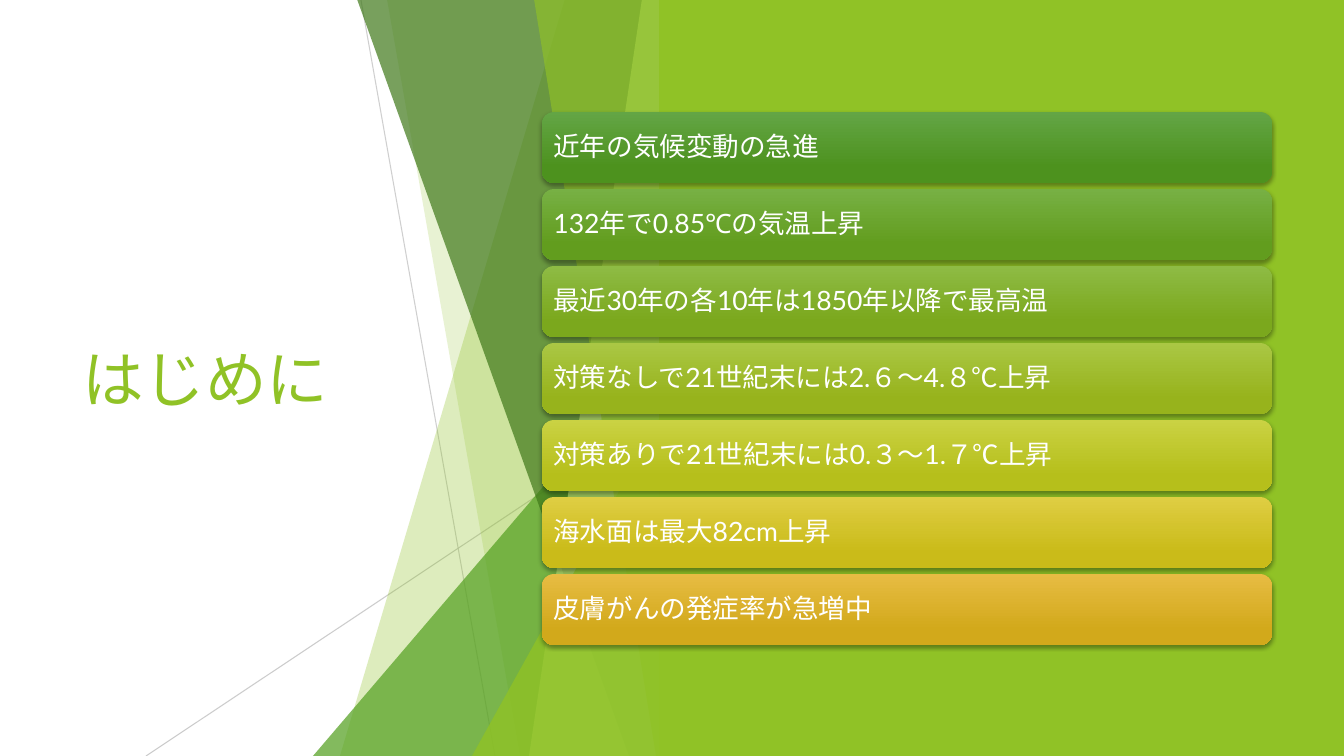
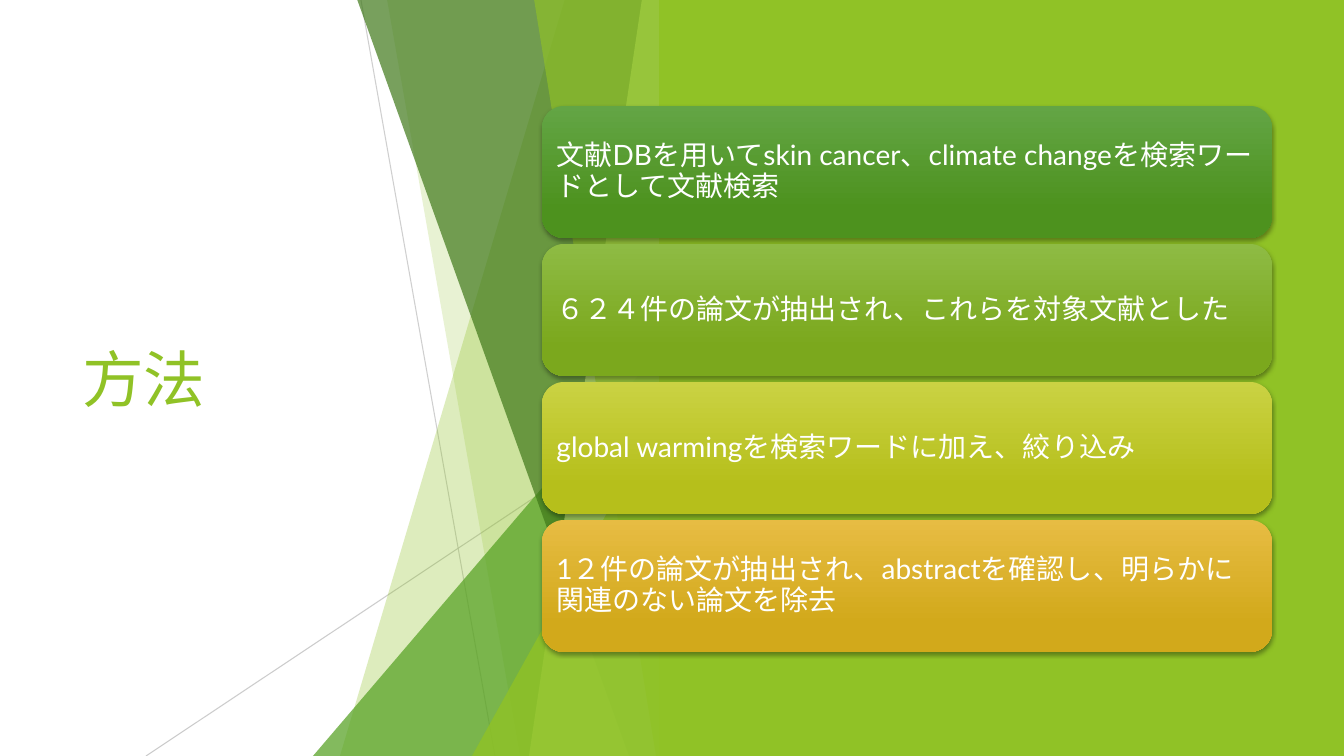
"""Build two slides with a shared faceted green layout and rows of gradient bars."""
from dataclasses import dataclass

from lxml import etree
from pptx import Presentation
from pptx import util as u
from pptx.dml.color import RGBColor
from pptx.enum import shapes, text
from pptx.oxml.ns import qn


@dataclass(frozen=True)
class Theme:
    font: str = "Lato"
    head: int = 44
    green: str = "90C226"
    leaf: str = "54A021"
    dark: str = "3F7819"
    lime: str = "C0E474"
    grey: str = "BFBFBF"
    white: str = "FFFFFF"
    black: str = "000000"
    ramp: tuple = (
        ("63A545", "4D921E"), ("77B044", "629D1E"), ("8EBB44", "7BA81D"),
        ("AAC744", "97B31C"), ("CAD243", "B6BF1B"), ("DFCE43", "CABB19"),
        ("E7BC43", "D2A91B"),
    )


WIDE, HIGH, HALF = 1344, 756, 672
SCALE = 12192000 / WIDE
BAR_X, BAR_W, GAP, PAD = 542, 730, 6, 8
theme = Theme()
rgb = RGBColor.from_string


def px(*sizes):
    return [u.Emu(round(size * SCALE)) for size in sizes]


def paint(shape, color):
    shape.shadow.inherit = False
    shape.fill.solid()
    shape.fill.fore_color.rgb = rgb(color)
    shape.line.fill.background()


LINES = [((361, 0, 495, HIGH), 75), ((HALF, 406, 146, HIGH), 80)]
FACETS = [
    ("shard", (565, 340), theme.green, 30),
    ("shard", (387, 520), theme.green, 20),
    ("wedge", (313, 336), theme.leaf, 72),
    ("shard", (357, 629), theme.dark, 70),
    ("shard", (642, 529), theme.lime, 70),
    ("shard", (534, 656), theme.green, 65),
    ("wedge", (472, 396), theme.green, 80),
]
PAGES = [
    ("はじめに", 19, 112, 71, [
        "近年の気候変動の急進",
        "132年で0.85℃の気温上昇",
        "最近30年の各10年は1850年以降で最高温",
        "対策なしで21世紀末には2.６〜4.８℃上昇",
        "対策ありで21世紀末には0.３〜1.７℃上昇",
        "海水面は最大82cm上昇",
        "皮膚がんの発症率が急増中",
    ]),
    ("方法", 20, 106, 132, [
        "文献DBを用いてskin cancer、climate changeを検索ワードとして文献検索",
        "６２４件の論文が抽出され、これらを対象文献とした",
        "global warmingを検索ワードに加え、絞り込み",
        "1２件の論文が抽出され、abstractを確認し、明らかに関連のない論文を除去",
    ]),
]

deck = Presentation()
deck.slide_width, deck.slide_height = px(WIDE, HIGH)
layout = deck.slide_layouts.get_by_name("Title Only")
for holder in list(layout.placeholders):
    if holder.placeholder_format.idx:
        holder.element.getparent().remove(holder.element)
    else:
        holder.left, holder.top, holder.width, holder.height = px(72, 152, 391, 452)
        holder.text_frame.vertical_anchor = text.MSO_ANCHOR.MIDDLE

slides = [deck.slides.add_slide(layout) for page in PAGES]

group = slides[0].shapes.add_group_shape()
for ends, alpha in LINES:
    line = group.shapes.add_connector(shapes.MSO_CONNECTOR.STRAIGHT, *px(*ends))
    line.line.color.rgb = rgb(theme.grey)
    line.line.width = u.Pt(0.75)
    etree.SubElement(line.element.spPr, qn("a:effectLst"))
for kind, (one, two), color, alpha in FACETS:
    if kind == "shard":
        pen = group.shapes.build_freeform(one, -1, scale=SCALE)
        pen.add_line_segments([(HALF, -1), (HALF, HIGH), (two, HIGH)], close=True)
        facet = pen.convert_to_shape()
    else:
        facet = group.shapes.add_shape(
            shapes.MSO_SHAPE.ISOSCELES_TRIANGLE, *px(one, two, HALF - one, HIGH - two))
        facet.adjustments[0] = 1
    paint(facet, color)
for part, (*rest, alpha) in zip(group.shapes, LINES + FACETS):
    for node in part.element.spPr.iter(qn("a:srgbClr")):
        etree.SubElement(node, qn("a:alpha"), val=str(alpha * 1000))
panel = group.shapes.add_shape(shapes.MSO_SHAPE.RECTANGLE, *px(659, 0, WIDE - 659, HIGH))
paint(panel, theme.green)
layout.shapes.element.append(group.element)

for slide, (head, size, top, tall, rows) in zip(slides, PAGES):
    slide.shapes.title.text_frame.text = head
    para = slide.shapes.title.text_frame.paragraphs[0]
    para.alignment = text.PP_ALIGN.LEFT
    font = para.runs[0].font
    font.name, font.size = theme.font, u.Pt(theme.head)
    font.color.rgb = rgb(theme.green)

    step = (len(theme.ramp) - 1) // (len(rows) - 1)
    for row, (words, pair) in enumerate(zip(rows, theme.ramp[::step])):
        bar = slide.shapes.add_shape(
            shapes.MSO_SHAPE.ROUNDED_RECTANGLE,
            *px(BAR_X, top + row * (tall + GAP), BAR_W, tall))
        bar.line.fill.background()
        bar.fill.gradient()
        bar.fill.gradient_angle = 270
        for stop, color, place in zip(bar.fill.gradient_stops, pair, (0, 0.78)):
            stop.color.rgb = rgb(color)
            stop.position = place

        bar.shadow.inherit = False
        shade = etree.SubElement(
            bar.element.spPr.find(qn("a:effectLst")), qn("a:outerShdw"),
            blurRad=str(u.Pt(3)), dist=str(u.Pt(2)), dir="5400000", rotWithShape="0")
        tint = etree.SubElement(shade, qn("a:srgbClr"), val=theme.black)
        etree.SubElement(tint, qn("a:alpha"), val="35000")

        frame = bar.text_frame
        frame.text = words
        frame.word_wrap = True
        frame.vertical_anchor = text.MSO_ANCHOR.MIDDLE
        (frame.margin_left, frame.margin_top,
         frame.margin_right, frame.margin_bottom) = px(PAD, PAD, PAD, PAD)
        para = frame.paragraphs[0]
        para.alignment = text.PP_ALIGN.LEFT
        para.line_spacing = 0.9
        para.space_after = u.Pt(7)
        font = para.runs[0].font
        font.name, font.size = theme.font, u.Pt(size)
        font.color.rgb = rgb(theme.white)

deck.save("out.pptx")
